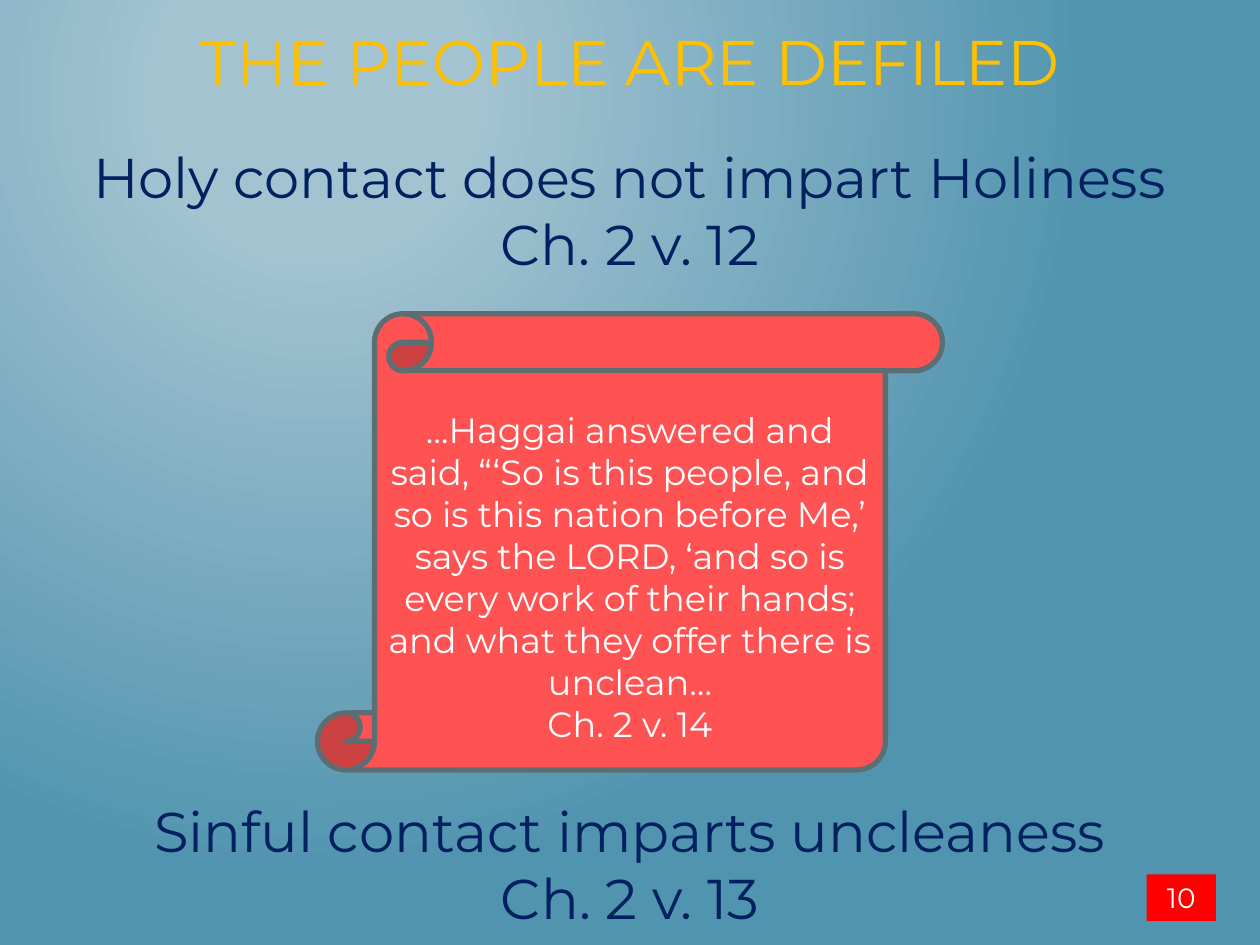
from lxml import etree
from pptx import Presentation
from pptx.dml.color import RGBColor
from pptx.enum.shapes import MSO_SHAPE
from pptx.enum.text import MSO_ANCHOR, PP_ALIGN
from pptx.oxml.ns import qn
from pptx.util import Inches, Pt

CENTER = PP_ALIGN.CENTER
TOP, MIDDLE = MSO_ANCHOR.TOP, MSO_ANCHOR.MIDDLE
SCROLL, RECTANGLE = MSO_SHAPE.VERTICAL_SCROLL, MSO_SHAPE.RECTANGLE

FONT = "Montserrat"
NAVY, GOLD, WHITE = "002060", "FFC000", "FFFFFF"
CORAL, SLATE, RED = "FF5353", "5C6E72", "FF0000"
WIDTH, HEIGHT = 10, 7.5

VERSE = (
    "…Haggai answered and said, “‘So is this people, and so is this nation "
    "before Me,’ says the LORD, ‘and so is every work of their hands; "
    "and what they offer there is unclean…"
)


def color(hex_string):
    return RGBColor.from_string(hex_string)


def write_text(shape, *lines, size, text_color, anchor=TOP, top_inset=0.05):
    frame = shape.text_frame
    frame.word_wrap = True
    frame.vertical_anchor = anchor
    frame.margin_top = Inches(top_inset)
    for index, line in enumerate(lines):
        para = frame.paragraphs[0] if index == 0 else frame.add_paragraph()
        para.alignment = CENTER
        span = para.add_run()
        span.text = line
        span.font.name = FONT
        span.font.size = Pt(size)
        span.font.color.rgb = color(text_color)


def add_heading(page, top, height, *lines, size=32, text_color=NAVY):
    box = page.shapes.add_textbox(0, Inches(top), Inches(WIDTH), Inches(height))
    write_text(box, *lines, size=size, text_color=text_color)


def add_panel(page, kind, left, top, width, height, fill, line=None):
    panel = page.shapes.add_shape(
        kind, Inches(left), Inches(top), Inches(width), Inches(height))
    panel.shadow.inherit = False
    panel.fill.solid()
    panel.fill.fore_color.rgb = color(fill)
    if line:
        panel.line.color.rgb = color(line)
        panel.line.width = Pt(3)
    else:
        panel.line.fill.background()
    return panel


def set_background(page):
    fill = page.background.fill
    fill.gradient()
    for stop, (position, shade) in zip(
            fill.gradient_stops, [(0.2, "A3C3D1"), (1, "5194AF")]):
        stop.position = position
        stop.color.rgb = color(shade)
    # Swap the linear direction for a circle centred at the upper left
    gradient = page._element.find(".//" + qn("a:gradFill"))
    circle = etree.Element(qn("a:path"), path="circle")
    etree.SubElement(circle, qn("a:fillToRect"),
                     l="50000", t="20000", r="100000", b="100000")
    gradient.replace(gradient.find(qn("a:lin")), circle)


def main():
    deck = Presentation()
    deck.slide_width, deck.slide_height = Inches(WIDTH), Inches(HEIGHT)
    page = deck.slides.add_slide(deck.slide_layouts[6])
    set_background(page)

    # Statements above and below the scroll
    add_heading(page, 1.08, 1.18,
                "Holy contact does not impart Holiness", "Ch. 2 v. 12")
    add_heading(page, 6.27, 1.18,
                "Sinful contact imparts uncleaness", "Ch. 2 v. 13")

    # Scroll with the verse, set one line lower than its middle
    scroll = add_panel(page, SCROLL, 2.52, 2.49, 4.96, 3.62, CORAL, SLATE)
    write_text(scroll, VERSE, "Ch. 2 v. 14", size=20, text_color=WHITE,
               anchor=MIDDLE, top_inset=0.38)

    # Title
    add_heading(page, 0.13, 0.71, "THE PEOPLE ARE DEFILED",
                size=36, text_color=GOLD)

    # Page number
    number = add_panel(page, RECTANGLE, 9.1, 6.94, 0.55, 0.37, RED)
    write_text(number, "10", size=16, text_color=WHITE)

    deck.save("out.pptx")


if __name__ == "__main__":
    main()
